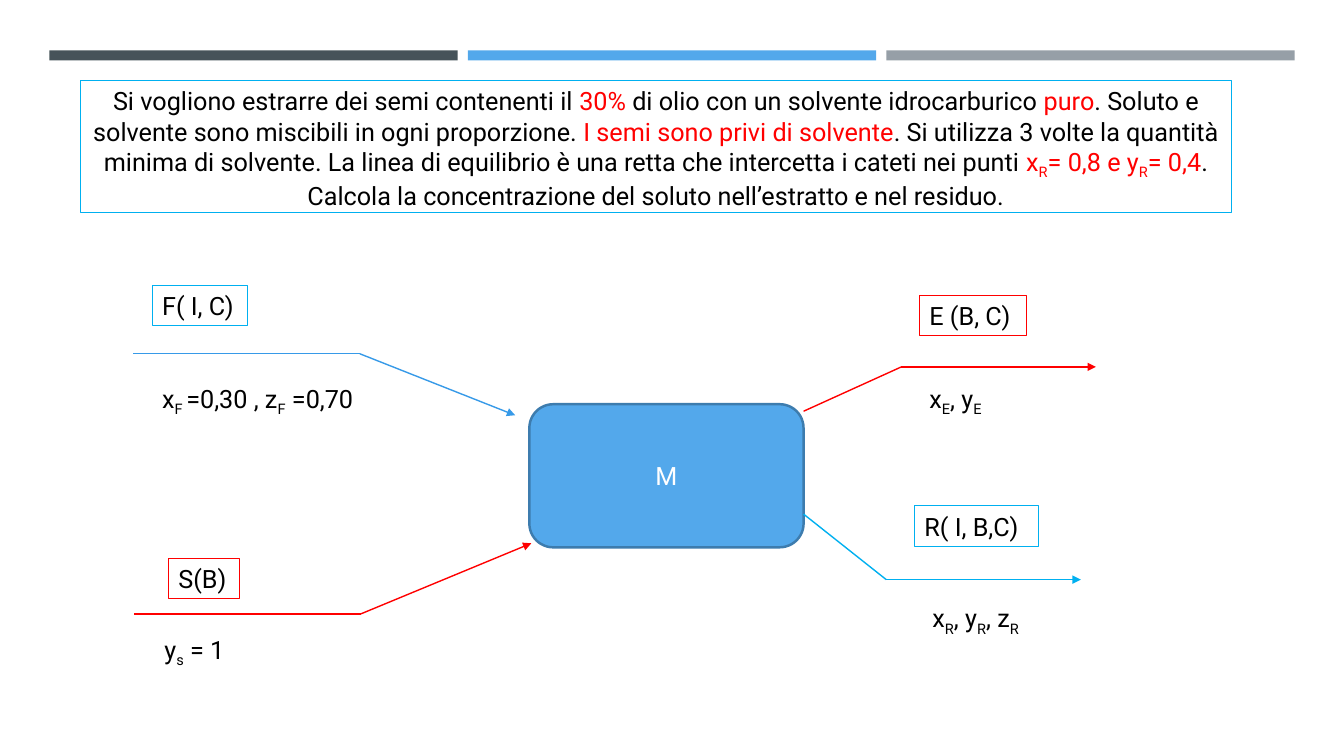
from lxml import etree
from pptx import Presentation
from pptx.dml.color import RGBColor
from pptx.enum import shapes, text
from pptx.oxml.ns import qn
from pptx.util import Inches, Pt

COLORS = {
    "slate": "465359", "blue": "53A8EB", "gray": "969FA7", "edge": "3D7CAE",
    "azure": "379AE8", "cyan": "00B0F0", "red": "FF0000",
    "black": "000000", "white": "FFFFFF",
}
LABEL_HEIGHT = 0.4

# Each run is (text, format words): "red" colours it, "sub" lowers it.
PROBLEM = [
    ("Si vogliono estrarre dei semi contenenti il ", ""), ("30%", "red"),
    (" di olio con un solvente idrocarburico ", ""), ("puro", "red"),
    (". Soluto e solvente sono miscibili in ogni proporzione. ", ""),
    ("I semi sono privi di solvente", "red"),
    (". Si utilizza 3 volte la quantità minima di solvente. La linea di equilibrio "
     "è una retta che intercetta i cateti nei punti ", ""),
    ("x", "red"), ("R", "red sub"), ("= 0,8 e y", "red"), ("R", "red sub"),
    ("= 0,4", "red"),
    (". Calcola la concentrazione del soluto nell’estratto e nel residuo.", ""),
]

# Points and label places (left, top, width) are offsets from the stream's origin.
STREAMS = [
    {"origin": (1.32, 3.51), "points": [(0, 0), (2.25, 0), (3.79, 0.61)],
     "line": "azure", "border": "cyan",
     "name": "F( I, C)", "name_at": (0.19, -0.68, 0.95),
     "values": [("x", ""), ("F ", "sub"), ("=0,30 , z", ""), ("F", "sub"), (" =0,70", "")],
     "values_at": (0.19, 0.24, 2.24)},
    {"origin": (1.33, 6.09), "points": [(0, 0), (2.25, 0), (3.94, -0.7)],
     "line": "red", "border": "red",
     "name": "S(B)", "name_at": (0.34, -0.55, 0.71),
     "values": [(" y", ""), ("s", "sub"), (" = 1", "")],
     "values_at": (0.14, 0.15, 0.9)},
    {"origin": (7.97, 4.08), "points": [(0, 0), (0.97, -0.44), (2.9, -0.44)],
     "line": "red", "border": "red",
     "name": "E (B, C)", "name_at": (1.15, -1.15, 1.06),
     "values": [("x", ""), ("E", "sub"), (", y", ""), ("E", "sub")],
     "values_at": (1.15, -0.33, 0.83)},
    {"origin": (7.97, 5.1), "points": [(0, 0), (0.82, 0.65), (2.75, 0.65)],
     "line": "cyan", "border": "cyan",
     "name": "R( I, B,C)", "name_at": (1.1, -0.08, 1.23),
     "values": [("x", ""), ("R", "sub"), (", y", ""), ("R", "sub"), (", z", ""), ("R", "sub")],
     "values_at": (1.18, 0.83, 1.21)},
]


def color(name):
    return RGBColor.from_string(COLORS[name])


def write_runs(frame, runs, base="black", align=text.PP_ALIGN.LEFT):
    para = frame.paragraphs[0]
    para.alignment = align
    for words, style in runs:
        span = para.add_run()
        span.text = words
        for name, value in {"name": "Roboto", "size": Pt(18)}.items():
            setattr(span.font, name, value)
        span.font.color.rgb = color("red" if "red" in style else base)
        if "sub" in style:
            span.font._element.set("baseline", "-25000")


def add_block(page, box, kind, fill=None, line=None, width=0.75):
    block = page.shapes.add_shape(kind, *map(Inches, box))
    block.shadow.inherit = False
    if fill:
        block.fill.solid()
        block.fill.fore_color.rgb = color(fill)
    else:
        block.fill.background()
    if line:
        block.line.color.rgb = color(line)
        block.line.width = Pt(width)
    else:
        block.line.fill.background()
    return block


def add_label(page, box, runs, border=None, wrap=False, align=text.PP_ALIGN.LEFT):
    if border:
        label = add_block(page, box, shapes.MSO_SHAPE.RECTANGLE, line=border)
    else:
        label = page.shapes.add_textbox(*map(Inches, box))
    settings = {"word_wrap": wrap, "auto_size": text.MSO_AUTO_SIZE.SHAPE_TO_FIT_TEXT,
                "vertical_anchor": text.MSO_ANCHOR.TOP}
    for name, value in settings.items():
        setattr(label.text_frame, name, value)
    write_runs(label.text_frame, runs, align=align)


def add_segment(page, start, end, line, arrow):
    segment = page.shapes.add_connector(
        shapes.MSO_CONNECTOR.STRAIGHT, *map(Inches, (*start, *end)))
    segment.line.color.rgb = color(line)
    segment.line.width = Pt(1)
    if arrow:
        etree.SubElement(segment.line._get_or_add_ln(), qn("a:tailEnd"), type="triangle")
    etree.SubElement(segment._element.spPr, qn("a:effectLst"))


def add_stream(page, stream):
    """Draw a bent arrow with its boxed name and its compositions."""
    left, top = stream["origin"]
    points = [(left + x, top + y) for x, y in stream["points"]]
    for start, end in zip(points, points[1:]):
        add_segment(page, start, end, stream["line"], arrow=end == points[-1])
    for runs, place, border in (
            ([(stream["name"], "")], stream["name_at"], stream["border"]),
            (stream["values"], stream["values_at"], None)):
        x, y, width = place
        add_label(page, (left + x, top + y, width, LABEL_HEIGHT), runs, border)


def add_top_bars(page, box):
    left, top, width, height = box
    gap = 0.1
    bar_width = (width - 2 * gap) / 3
    for index, fill in enumerate(("slate", "blue", "gray")):
        place = (left + index * (bar_width + gap), top, bar_width, height)
        add_block(page, place, shapes.MSO_SHAPE.RECTANGLE, fill)


def add_mixer(page, box):
    mixer = add_block(page, box, shapes.MSO_SHAPE.ROUNDED_RECTANGLE, "blue", "edge", 1.75)
    mixer.text_frame.vertical_anchor = text.MSO_ANCHOR.MIDDLE
    write_runs(mixer.text_frame, [("M", "")], "white", text.PP_ALIGN.CENTER)


def main():
    deck = Presentation()
    deck.slide_width, deck.slide_height = Inches(13.33), Inches(7.5)
    page = deck.slides.add_slide(deck.slide_layouts[6])
    add_top_bars(page, (0.49, 0.5, 12.35, 0.1))
    add_mixer(page, (5.25, 4.01, 2.72, 1.42))
    for stream in STREAMS:
        add_stream(page, stream)
    add_label(page, (0.8, 0.8, 11.41, 1.31), PROBLEM, "cyan", True, text.PP_ALIGN.CENTER)
    deck.save("out.pptx")


if __name__ == "__main__":
    main()
